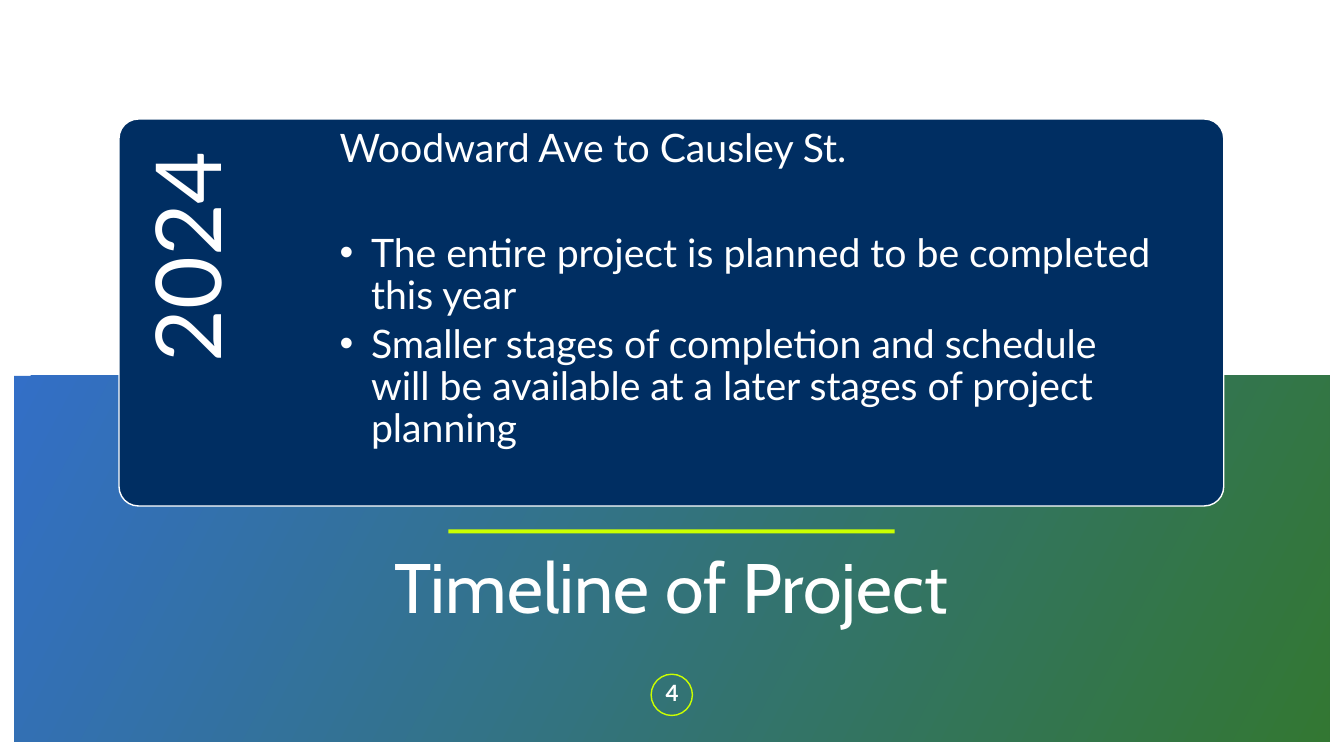
"""Build the project timeline slide."""
from lxml import etree
from pptx import Presentation
from pptx import util as u
from pptx.dml import color
from pptx.enum import shapes, text
from pptx.oxml import ns

COLORS = {
    "white": "FFFFFF",
    "navy": "002E62",
    "lime": "CBFF00",
    "blue": "004CB9",
    "green": "005500",
}
BULLETS = [
    "The entire project is planned to be completed this year",
    "Smaller stages of completion and schedule will be available at a "
    "later stages of project planning",
]


def rgb(name):
    return color.RGBColor.from_string(COLORS[name])


def place(sp, box):
    sp.left, sp.top, sp.width, sp.height = (u.Cm(v) for v in box)


def add_shape(s, kind, box, fill=None, line=None):
    sp = s.shapes.add_shape(kind, *(u.Cm(v) for v in box))
    sp.shadow.inherit = False
    if fill:
        sp.fill.solid()
        sp.fill.fore_color.rgb = rgb(fill)
    else:
        sp.fill.background()
    if line:
        sp.line.color.rgb = rgb(line)
        sp.line.width = u.Pt(1)
    else:
        sp.line.fill.background()
    return sp


def add_gradient_band(s, box):
    sp = add_shape(s, shapes.MSO_SHAPE.RECTANGLE, box)
    sp.fill.gradient()
    sp.fill.gradient_angle = 332
    for stop, name in zip(sp.fill.gradient_stops, ("blue", "green")):
        stop.color.rgb = rgb(name)
    for clr in sp.element.spPr.iter(ns.qn("a:srgbClr")):
        etree.SubElement(clr, ns.qn("a:alpha"), val="80000")


def set_frame(sp, anchor, insets=(0, 0, 0, 0)):
    tf = sp.text_frame
    tf.word_wrap = True
    tf.auto_size = text.MSO_AUTO_SIZE.NONE
    tf.vertical_anchor = anchor
    tf.margin_left, tf.margin_top, tf.margin_right, tf.margin_bottom = (
        u.Cm(v) for v in insets)
    return tf


def set_bullet(p, char=None):
    pPr = p._p.get_or_add_pPr()
    hang = u.Cm(0.79) if char else 0
    pPr.set("marL", str(hang))
    pPr.set("indent", str(-hang))
    if char:
        etree.SubElement(pPr, ns.qn("a:buChar"), char=char)
    else:
        etree.SubElement(pPr, ns.qn("a:buNone"))


def style(p, size, align, font="Lato", bold=False, after=0):
    p.alignment = align
    p.line_spacing = 0.9
    p.space_before = u.Pt(0)
    p.space_after = u.Pt(after)
    for r in p.runs:
        r.font.size = u.Pt(size)
        r.font.name = font
        r.font.bold = bold
        r.font.color.rgb = rgb("white")


def add_label(s, box, label, size, align, anchor, insets=(0, 0, 0, 0), bold=False):
    sp = s.shapes.add_textbox(*(u.Cm(v) for v in box))
    p = set_frame(sp, anchor, insets).paragraphs[0]
    p.text = label
    style(p, size, align, bold=bold)
    return sp


def fill_title(s, box):
    sp = s.shapes.title
    place(sp, box)
    p = set_frame(sp, text.MSO_ANCHOR.MIDDLE).paragraphs[0]
    p.text = "Timeline of Project"
    style(p, 50, text.PP_ALIGN.CENTER, font="Cabin")
    s.shapes.element.append(sp.element)


def fill_list(s, box):
    sp = s.placeholders[1]
    place(sp, box)
    tf = set_frame(sp, text.MSO_ANCHOR.TOP, (0, 0.25, 0, 0))
    p = tf.paragraphs[0]
    p.text = "Woodward Ave to Causley St."
    set_bullet(p)
    style(p, 28, text.PP_ALIGN.LEFT, after=44.5)
    for bullet in BULLETS:
        p = tf.add_paragraph()
        p.text = bullet
        set_bullet(p, "•")
        style(p, 28, text.PP_ALIGN.LEFT, after=4.2)
    s.shapes.element.append(sp.element)


def main():
    prs = Presentation()
    prs.slide_width, prs.slide_height = u.Cm(33.87), u.Cm(19.05)
    s = prs.slides.add_slide(prs.slide_layouts[1])
    kinds, align, anchor = shapes.MSO_SHAPE, text.PP_ALIGN, text.MSO_ANCHOR

    add_gradient_band(s, (0.36, 9.47, 33.15, 9.22))
    add_shape(s, kinds.OVAL, (16.41, 16.99, 1.04, 1.04), line="lime")
    add_shape(s, kinds.RECTANGLE, (11.3, 13.34, 11.25, 0.1), fill="lime")
    fill_title(s, (2.31, 13.79, 29.21, 2.18))
    add_label(s, (16.18, 16.99, 1.52, 1.02), "4", 16, align.CENTER,
              anchor.MIDDLE, bold=True)

    card = add_shape(s, kinds.ROUNDED_RECTANGLE, (3, 3, 27.84, 9.75),
                     fill="navy", line="white")
    card.adjustments[0] = 0.05
    year = add_label(s, (1.78, 4.22, 8, 5.56), "2024", 65, align.RIGHT,
                     anchor.TOP, (0, 0.61, 0.81, 0))
    year.rotation = 270
    fill_list(s, (8.56, 3, 20.73, 9.75))
    prs.save("out.pptx")


if __name__ == "__main__":
    main()
